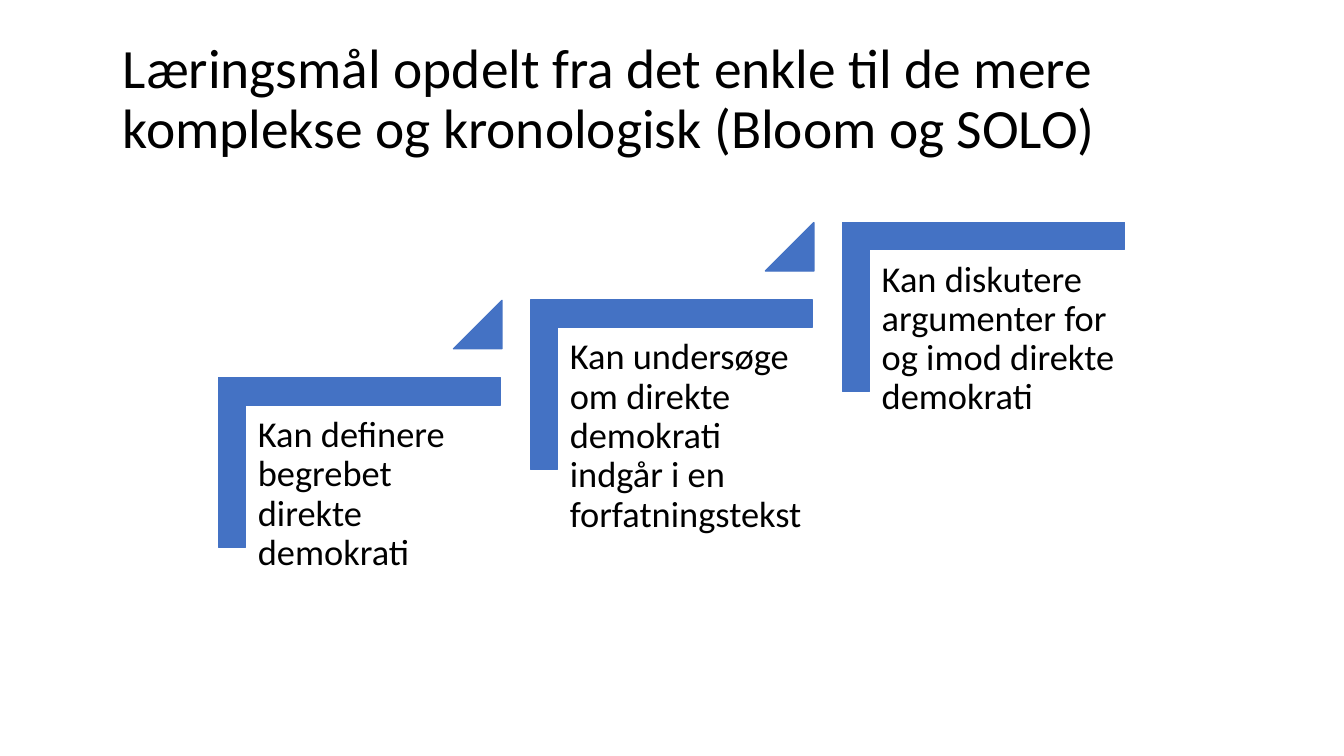
from dataclasses import dataclass

from pptx import Presentation
from pptx import util as u
from pptx.dml.color import RGBColor
from pptx.enum import shapes, text
from pptx.shapes.autoshape import Shape
from pptx.shapes.shapetree import GroupShapes
from pptx.slide import Slide
from pptx.text.text import TextFrame


@dataclass(frozen=True)
class Theme:
    font: str = "Calibri"
    ink: RGBColor = RGBColor(0x00, 0x00, 0x00)
    accent: RGBColor = RGBColor(0x44, 0x72, 0xC4)
    title_size: float = 39.6
    goal_size: float = 26
    outline: float = 1
    line_spacing: float = 0.9


@dataclass(frozen=True)
class Box:
    left: float
    top: float
    width: float
    height: float

    def climb(self, level: int) -> "Box":
        return Box(self.left + level * STEP_RIGHT, self.top - level * STEP_UP,
                   self.width, self.height)

    def emu(self) -> tuple[u.Cm, u.Cm, u.Cm, u.Cm]:
        return u.Cm(self.left), u.Cm(self.top), u.Cm(self.width), u.Cm(self.height)


@dataclass(frozen=True)
class Goal:
    level: int
    wording: str


THEME = Theme()
STEP_RIGHT = 7.86
STEP_UP = 1.96
HEADING = Box(2.84, 0.86, 28.78, 3.33)
BRACKET = Box(6.93, 8.1, 4.27, 7.11)
WORDING = Box(6.22, 10.21, 6.43, 5.64)
RISE = Box(11.43, 7.57, 1.22, 1.22)
BRACKET_THICKNESS = 0.16
WORDING_INSET = 0.28

HEADLINE = "Læringsmål opdelt fra det enkle til de mere komplekse og kronologisk (Bloom og SOLO)"
GOALS = [
    Goal(0, "Kan definere begrebet direkte demokrati"),
    Goal(1, "Kan undersøge om direkte demokrati indgår i en forfatningstekst"),
    Goal(2, "Kan diskutere argumenter for og imod direkte demokrati"),
]


def write(frame: TextFrame, wording: str, size: float) -> None:
    frame.text = wording
    frame.word_wrap = True
    frame.auto_size = text.MSO_AUTO_SIZE.NONE
    paragraph = frame.paragraphs[0]
    paragraph.alignment = text.PP_ALIGN.LEFT
    paragraph.line_spacing = THEME.line_spacing
    paragraph.font.name = THEME.font
    paragraph.font.size = u.Pt(size)
    paragraph.font.color.rgb = THEME.ink


def add_accent(staircase: GroupShapes, preset: shapes.MSO_SHAPE, box: Box) -> Shape:
    accent = staircase.add_shape(preset, *box.emu())
    accent.shadow.inherit = False
    accent.fill.solid()
    accent.fill.fore_color.rgb = THEME.accent
    accent.line.color.rgb = THEME.accent
    accent.line.width = u.Pt(THEME.outline)
    return accent


def add_goal(staircase: GroupShapes, goal: Goal, is_last: bool) -> None:
    bracket = add_accent(staircase, shapes.MSO_SHAPE.CORNER, BRACKET.climb(goal.level))
    bracket.rotation = 90
    bracket.adjustments[0] = BRACKET_THICKNESS
    bracket.adjustments[1] = BRACKET_THICKNESS

    frame = staircase.add_textbox(*WORDING.climb(goal.level).emu()).text_frame
    write(frame, goal.wording, THEME.goal_size)
    frame.margin_left = frame.margin_right = u.Cm(WORDING_INSET)
    frame.margin_top = frame.margin_bottom = u.Cm(WORDING_INSET)

    if not is_last:
        rise = add_accent(staircase, shapes.MSO_SHAPE.ISOSCELES_TRIANGLE,
                          RISE.climb(goal.level))
        rise.adjustments[0] = 1


def add_heading(slide: Slide) -> None:
    heading = slide.shapes.title
    heading.left, heading.top, heading.width, heading.height = HEADING.emu()
    write(heading.text_frame, HEADLINE, THEME.title_size)
    heading.text_frame.vertical_anchor = text.MSO_ANCHOR.MIDDLE


def main() -> None:
    deck = Presentation()
    deck.slide_width, deck.slide_height = u.Cm(33.87), u.Cm(19.05)
    slide = deck.slides.add_slide(deck.slide_layouts[5])
    add_heading(slide)
    staircase = slide.shapes.add_group_shape().shapes
    for goal in GOALS:
        add_goal(staircase, goal, is_last=goal is GOALS[-1])
    deck.save("out.pptx")


if __name__ == "__main__":
    main()
